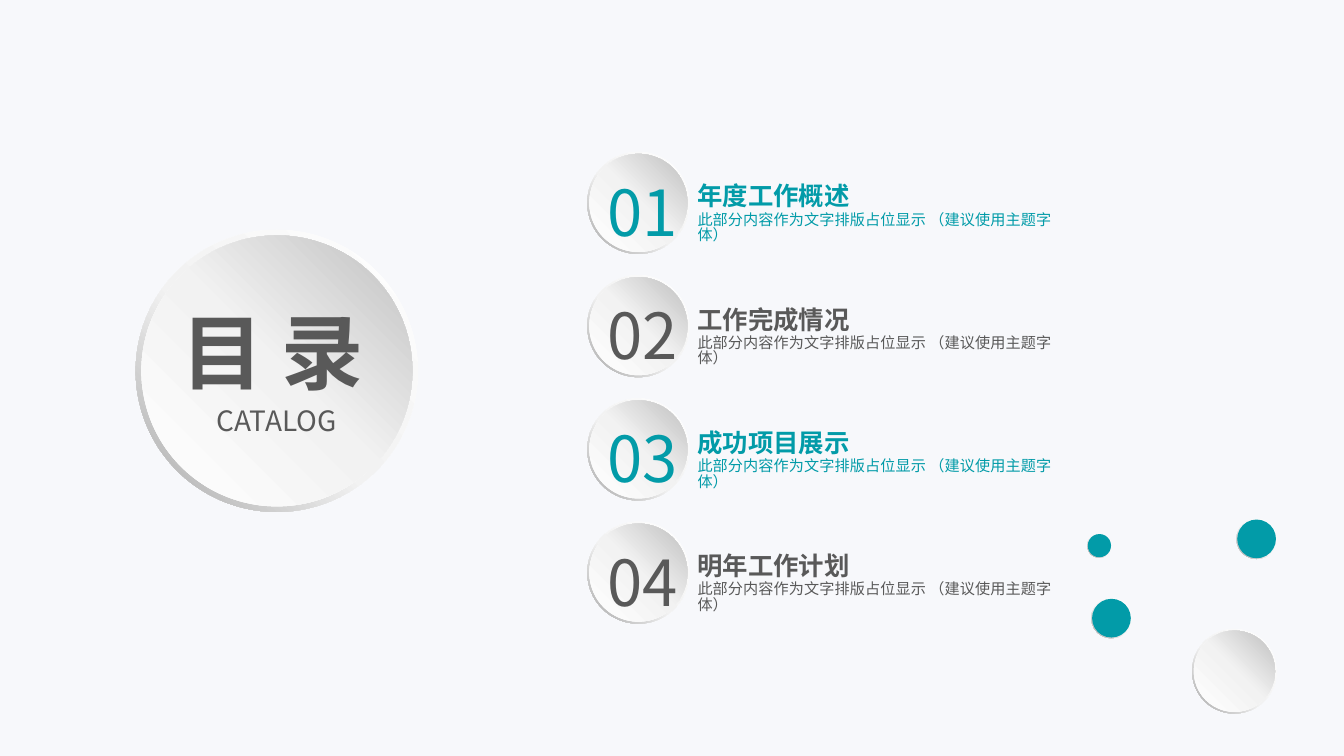
from copy import deepcopy
from dataclasses import dataclass

from lxml import etree
from pptx import Presentation
from pptx import util as u
from pptx.dml.color import RGBColor
from pptx.enum import shapes, text
from pptx.oxml.ns import qn

# Square grid: 100 columns across a 16:9 slide
SLIDE_W = u.Inches(10)
SLIDE_H = SLIDE_W * 9 // 16
CELL = SLIDE_W / 100


@dataclass(frozen=True)
class Theme:
    font: str = "Noto Sans CJK SC"
    paper: str = "F7F8FB"
    teal: str = "029BA8"
    grey: str = "595959"
    rim: tuple = ((0, "FFFFFF"), (0.55, "F2F2F2"), (1, "A6A6A6"))
    face: tuple = ((0, "FFFFFF"), (0.51, "F2F2F2"), (1, "BFBFBF"))
    heading: float = 44
    number: float = 34
    subheading: float = 15
    title: float = 13.6
    detail: float = 8.1


@dataclass(frozen=True)
class Box:
    """A place on the grid, in columns and rows."""
    left: float
    top: float
    width: float
    height: float

    def emu(self) -> list[int]:
        return [round(n * CELL) for n in (self.left, self.top, self.width, self.height)]


@dataclass(frozen=True)
class Disc:
    left: float
    top: float
    size: float
    color: str | None = None


THEME = Theme()
DETAIL = "此部分内容作为文字排版占位显示 （建议使用主题字体）"
CHAPTERS = ("年度工作概述", "工作完成情况", "成功项目展示", "明年工作计划")
FIRST_ROW, ROW_PITCH = 11.3, 9.17
FACE_SHARE = 0.96
CATALOG_DISC = Disc(10.1, 17.1, 21)
CORNER_DISCS = (
    Disc(88.7, 46.8, 6.3),
    Disc(81.2, 44.5, 3, THEME.teal),
    Disc(92, 38.6, 3, THEME.teal),
    Disc(80.9, 39.7, 1.8, THEME.teal),
)


def fill_gradient(shape, stops: tuple, angle: float) -> None:
    """Fill with three stops; the angle runs counter-clockwise."""
    shape.fill.gradient()
    stop_list = shape._element.spPr.find(qn("a:gradFill")).find(qn("a:gsLst"))
    stop_list.insert(1, deepcopy(stop_list[0]))
    for stop, (position, color) in zip(shape.fill.gradient_stops, stops):
        stop.position = position
        stop.color.rgb = RGBColor.from_string(color)
    shape.fill.gradient_angle = angle


def add_round(parent, kind, box: Box):
    shape = parent.shapes.add_shape(kind, *box.emu())
    shape.shadow.inherit = False
    shape.line.fill.background()
    return shape


def draw_disc(slide, disc: Disc):
    """Draw a raised disc as a group of rim and face, and return the group."""
    group = slide.shapes.add_group_shape()
    rim = add_round(group, shapes.MSO_SHAPE.DONUT,
                    Box(disc.left, disc.top, disc.size, disc.size))
    rim.adjustments[0] = 0.049
    fill_gradient(rim, THEME.rim, 225)

    size = disc.size * FACE_SHARE
    inset = (disc.size - size) / 2
    face = add_round(group, shapes.MSO_SHAPE.OVAL,
                     Box(disc.left + inset, disc.top + inset, size, size))
    if disc.color:
        face.fill.solid()
        face.fill.fore_color.rgb = RGBColor.from_string(disc.color)
    else:
        fill_gradient(face, THEME.face, 45)
    return group


def write(parent, content: str, box: Box, *, size: float, color: str,
          bold: bool = False, wrap: bool = True, grow: bool = False,
          anchor=text.MSO_ANCHOR.MIDDLE, align=None, spacing: float | None = None,
          insets: tuple = (0.1, 0.05, 0.1, 0.05)) -> None:
    frame = parent.shapes.add_textbox(*box.emu()).text_frame
    frame.word_wrap = wrap
    frame.vertical_anchor = anchor
    if grow:
        frame.auto_size = text.MSO_AUTO_SIZE.SHAPE_TO_FIT_TEXT
    (frame.margin_left, frame.margin_top,
     frame.margin_right, frame.margin_bottom) = map(u.Inches, insets)
    paragraph = frame.paragraphs[0]
    paragraph.alignment = align
    paragraph.line_spacing = spacing
    run = paragraph.add_run()
    run.text = content
    run.font.size = u.Pt(size)
    run.font.bold = bold
    run.font.color.rgb = RGBColor.from_string(color)
    run.font.name = THEME.font
    # East Asian glyphs need their own typeface entry
    etree.SubElement(run.font._element, qn("a:ea"), typeface=THEME.font)


def draw_chapter(slide, index: int, title: str) -> None:
    top = FIRST_ROW + index * ROW_PITCH
    color = THEME.grey if index % 2 else THEME.teal
    entry = draw_disc(slide, Disc(43.7, top, 7.6))
    write(entry, f"{index + 1:02}", Box(44.2, top + 1.5, 6.6, 5.8),
          size=THEME.number, color=color, wrap=False, insets=(0.1, 0.05, 0, 0.05))
    write(entry, title, Box(48, top + 2.4, 32.5, 2), size=THEME.title, color=color,
          bold=True, wrap=False, anchor=text.MSO_ANCHOR.BOTTOM, insets=(0.39, 0, 0, 0))
    # The right inset keeps the last two characters on a second line
    write(entry, DETAIL, Box(48, top + 4.4, 32.5, 2.6), size=THEME.detail,
          color=color, spacing=0.85, insets=(0.39, 0, 0.15, 0))


def main() -> None:
    deck = Presentation()
    deck.slide_width, deck.slide_height = SLIDE_W, SLIDE_H
    slide = deck.slides.add_slide(deck.slide_layouts[6])
    slide.background.fill.solid()
    slide.background.fill.fore_color.rgb = RGBColor.from_string(THEME.paper)

    # Chapter list
    for index, title in enumerate(CHAPTERS):
        draw_chapter(slide, index, title)

    # Catalog heading
    draw_disc(slide, CATALOG_DISC)
    write(slide, "目 录", Box(12.5, 21.9, 18.1, 8.4), size=THEME.heading,
          color=THEME.grey, bold=True, grow=True, anchor=text.MSO_ANCHOR.TOP)
    write(slide, "CATALOG", Box(13.1, 29.2, 15, 4.2), size=THEME.subheading,
          color=THEME.grey, align=text.PP_ALIGN.CENTER, insets=(0.07, 0.04, 0.07, 0.04))

    # Corner decoration
    for disc in CORNER_DISCS:
        draw_disc(slide, disc)

    deck.save("out.pptx")


if __name__ == "__main__":
    main()
